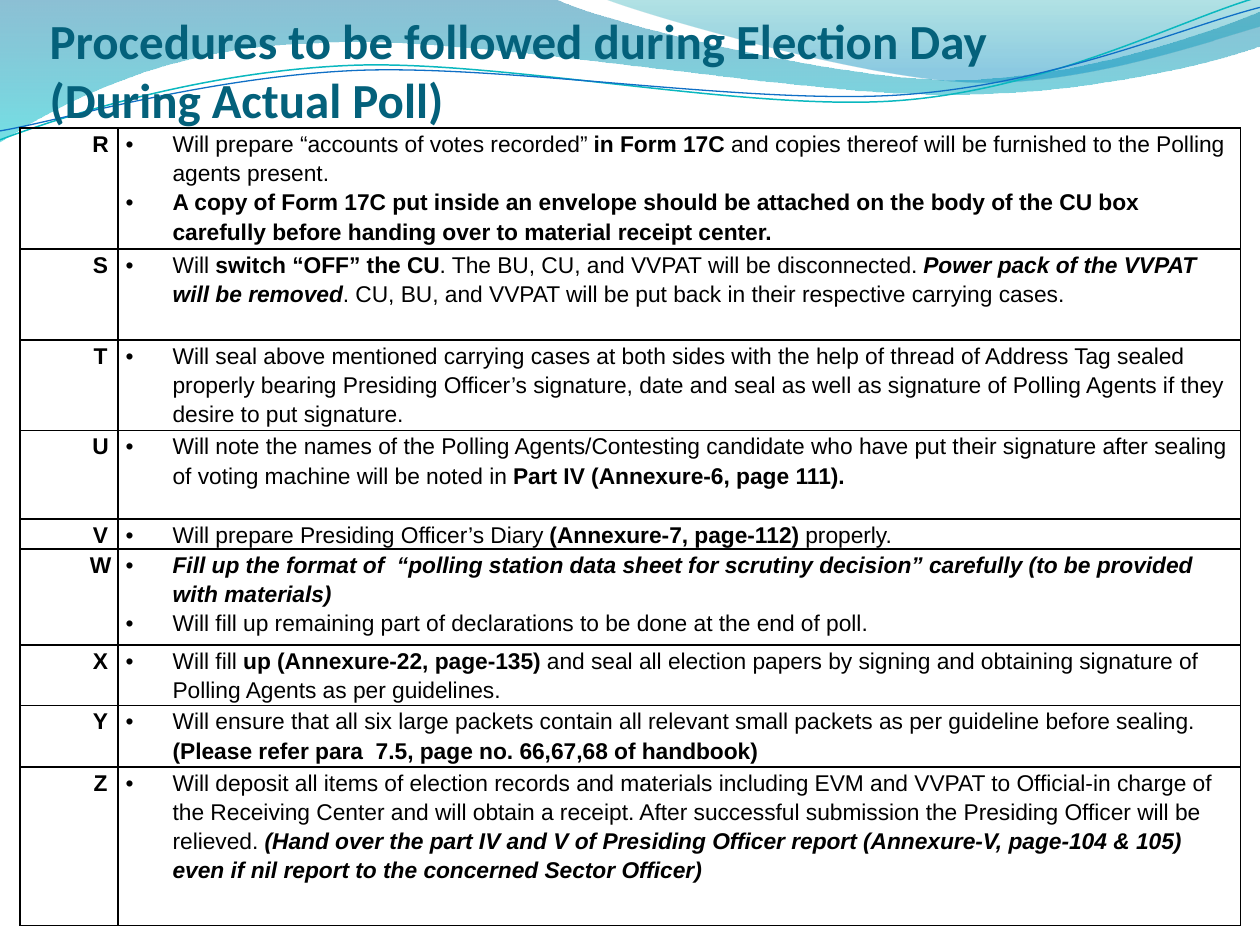
from dataclasses import dataclass

from lxml.etree import SubElement
from pptx import Presentation
from pptx.dml.color import RGBColor
from pptx.enum.text import MSO_ANCHOR, PP_ALIGN
from pptx.oxml.ns import qn
from pptx.util import Cm, Pt


@dataclass(frozen=True)
class Theme:
    title_color: str = "04617B"
    ink: str = "000000"
    title_font: str = "Calibri"
    body_font: str = "Arial"
    title_size: float = 28
    body_size: float = 13
    body_leading: float = 16.7
    # Gradient stops: position, colour, opacity in percent
    wide_wave: tuple = ((0, "0074A1", 45), (1, "00C6CF", 55))
    right_wave: tuple = ((0, "00A1A9", 30), (0.8, "008BBF", 45))
    teal_line: str = "0AB8BF"
    blue_line: str = "0F6FC6"


THEME = Theme()

prs = Presentation()
prs.slide_width, prs.slide_height = Cm(25.4), Cm(19.05)
slide = prs.slides.add_slide(prs.slide_layouts[6])


def add_curve(start, segments, close):
    """Draw straight (2 numbers) and cubic (6 numbers) segments, in centimetres."""
    builder = slide.shapes.build_freeform(Cm(start[0]), Cm(start[1]))
    for segment in segments:
        lengths = [Cm(number) for number in segment]
        builder.add_line_segments(list(zip(lengths[::2], lengths[1::2])), close=False)
    if close:
        builder.add_line_segments([], close=True)
    curve = builder.convert_to_shape()
    curve.shadow.inherit = False
    # The builder knows only lines: merge each three of a cubic segment into one curve
    corners = iter(list(curve.element.spPr.iter(qn("a:lnTo"))))
    for segment in segments:
        corner = next(corners)
        if len(segment) == 6:
            corner.tag = qn("a:cubicBezTo")
            for extra in (next(corners), next(corners)):
                corner.append(extra[0])
                extra.getparent().remove(extra)
    return curve


def add_run(paragraph, text, font_name, size, color, style=""):
    """Style holds "b" for bold and "i" for italic."""
    run = paragraph.add_run()
    run.text = text
    run.font.name, run.font.size = font_name, Pt(size)
    run.font.color.rgb = RGBColor.from_string(color)
    run.font.bold, run.font.italic = "b" in style, "i" in style


# Header waves
waves = [
    (THEME.wide_wave, (0, 0), [
        (11.18, -0.03),
        (12.09, 0.43, 16.87, 1.6, 19.25, 1.6),
        (21.67, 1.6, 24.33, 0.66, 25.4, 0.23),
        (25.43, 0.91),
        (24.97, 1.12, 22.1, 1.93, 18.95, 1.9),
        (15.8, 1.9, 9.7, 0.71, 6.53, 0.86),
        (3.28, 0.91, 1.17, 2.11, -0.03, 2.87)]),
    (THEME.right_wave, (12.17, -0.03), [
        (12.93, 0.28, 17.32, 1.57, 19.53, 1.65),
        (21.74, 1.75, 24.41, 0.81, 25.4, 0.53),
        (25.4, 0)]),
]
for stops, start, segments in waves:
    wave = add_curve(start, segments, close=True)
    wave.line.fill.background()
    wave.fill.gradient()
    wave.fill.gradient_angle = 270
    for stop, (position, color, _) in zip(wave.fill.gradient_stops, stops):
        stop.position = position
        stop.color.rgb = RGBColor.from_string(color)
    for rgb, (_, _, opacity) in zip(wave.element.spPr.iter(qn("a:srgbClr")), stops):
        SubElement(rgb, qn("a:alpha"), val=str(opacity * 1000))

ripples = [
    (THEME.teal_line, 0.85, (0, 2.82), [
        (1.22, 2.36, 4.01, 1.45, 7.04, 1.32),
        (10.03, 1.19, 15.06, 2.26, 18.11, 2.03),
        (21.16, 1.8, 23.83, 0.38, 25.35, -0.05)]),
    (THEME.blue_line, 0.75, (0, 2.64), [
        (1.19, 2.44, 4.17, 1.55, 7.19, 1.42),
        (10.24, 1.3, 15.16, 2.13, 18.21, 1.91),
        (21.23, 1.7, 23.9, 0.53, 25.4, 0.15)]),
]
for color, width, start, segments in ripples:
    ripple = add_curve(start, segments, close=False)
    ripple.fill.background()
    ripple.line.color.rgb = RGBColor.from_string(color)
    ripple.line.width = Pt(width)

# Title
title = slide.shapes.add_textbox(Cm(1), Cm(0.41), Cm(22.86), Cm(2.18)).text_frame
title.word_wrap = True
title.vertical_anchor = MSO_ANCHOR.BOTTOM
title.margin_left = title.margin_right = title.margin_bottom = 0
title.margin_top = Cm(0.13)
heading = title.paragraphs[0]
title_style = (THEME.title_font, THEME.title_size, THEME.title_color, "b")
add_run(heading, "Procedures to be followed during Election Day", *title_style)
heading.add_line_break()
add_run(heading, "(During Actual Poll)", *title_style)

# Procedures: letter, row height, bullets made of (text, style) runs
procedures = [
    ("R", 2.44, [
        [("Will prepare “accounts of votes recorded” ", ""), ("in Form 17C", "b"),
         (" and copies thereof will be furnished to the Polling agents present.", "")],
        [("A copy of Form 17C put inside an envelope should be attached on the body of the "
          "CU box carefully before handing over to material receipt center.", "b")]]),
    ("S", 1.83, [
        [("Will ", ""), ("switch “OFF” the CU", "b"),
         (". The BU, CU, and VVPAT will be disconnected. ", ""),
         ("Power pack of the VVPAT will be removed", "bi"),
         (". CU, BU, and VVPAT will be put back in their respective carrying cases.", "")]]),
    ("T", 1.83, [
        [("Will seal above mentioned carrying cases at both sides with the help of thread of "
          "Address Tag sealed properly bearing Presiding Officer’s signature, date and seal as "
          "well as signature of Polling Agents if they desire to put signature.", "")]]),
    ("U", 1.78, [
        [("Will note the names of the Polling Agents/Contesting candidate who have put their "
          "signature after sealing of voting machine will be noted in ", ""),
         ("Part IV (Annexure-6, page 111).", "b")]]),
    ("V", 0.61, [
        [("Will prepare Presiding Officer’s Diary ", ""), ("(Annexure-7, page-112)", "b"),
         (" properly.", "")]]),
    ("W", 1.93, [
        [("Fill up the format of  “polling station data sheet for scrutiny decision” carefully "
          "(to be provided with materials)", "bi")],
        [("Will fill up remaining part of declarations to be done at the end of poll.", "")]]),
    ("X", 1.22, [
        [("Will fill ", ""), ("up (Annexure-22, page-135)", "b"),
         (" and seal all election papers by signing and obtaining signature of Polling Agents "
          "as per guidelines.", "")]]),
    ("Y", 1.24, [
        [("Will ensure that all six large packets contain all relevant small packets as per "
          "guideline before sealing. ", ""),
         ("(Please refer para  7.5, page no. 66,67,68 of handbook)", "b")]]),
    ("Z", 3.2, [
        [("Will deposit all items of election records and materials including EVM and VVPAT to "
          "Official-in charge of the Receiving Center and will obtain a receipt. After "
          "successful submission the Presiding Officer will be relieved. ", ""),
         ("(Hand over the part IV and V of Presiding Officer report (Annexure-V, page-104 & "
          "105) even if nil report to the concerned Sector Officer)", "bi")]]),
]
column_widths = (1.98, 22.63)
table = slide.shapes.add_table(
    len(procedures), len(column_widths), Cm(0.4), Cm(2.58), Cm(sum(column_widths)),
    Cm(sum(height for _, height, _ in procedures))).table
table.first_row = table.horz_banding = False
for column, width in zip(table.columns, column_widths):
    column.width = Cm(width)

for row, (letter, height, bullets) in zip(table.rows, procedures):
    row.height = Cm(height)
    for cell, paragraphs in zip(row.cells, ([[(letter, "b")]], bullets)):
        cell.margin_left = cell.margin_right = Cm(0.15)
        cell.margin_top = cell.margin_bottom = 0
        for side in ("lnL", "lnR", "lnT", "lnB"):
            border = SubElement(cell._tc.get_or_add_tcPr(), qn(f"a:{side}"), w=str(Pt(1)))
            SubElement(SubElement(border, qn("a:solidFill")), qn("a:srgbClr"), val=THEME.ink)
        cell.fill.background()
        for index, runs in enumerate(paragraphs):
            frame = cell.text_frame
            paragraph = frame.add_paragraph() if index else frame.paragraphs[0]
            paragraph.line_spacing = Pt(THEME.body_leading)
            properties = paragraph._p.get_or_add_pPr()
            if paragraphs is bullets:
                properties.set("marL", str(Cm(0.95)))
                properties.set("indent", str(-Cm(0.95)))
                SubElement(properties, qn("a:buFont"), typeface=THEME.body_font)
                SubElement(properties, qn("a:buChar"), char="•")
            else:
                paragraph.alignment = PP_ALIGN.CENTER
                properties.set("marL", str(Cm(1.27)))
            for text, style in runs:
                add_run(paragraph, text, THEME.body_font, THEME.body_size, THEME.ink, style)

prs.save("out.pptx")
